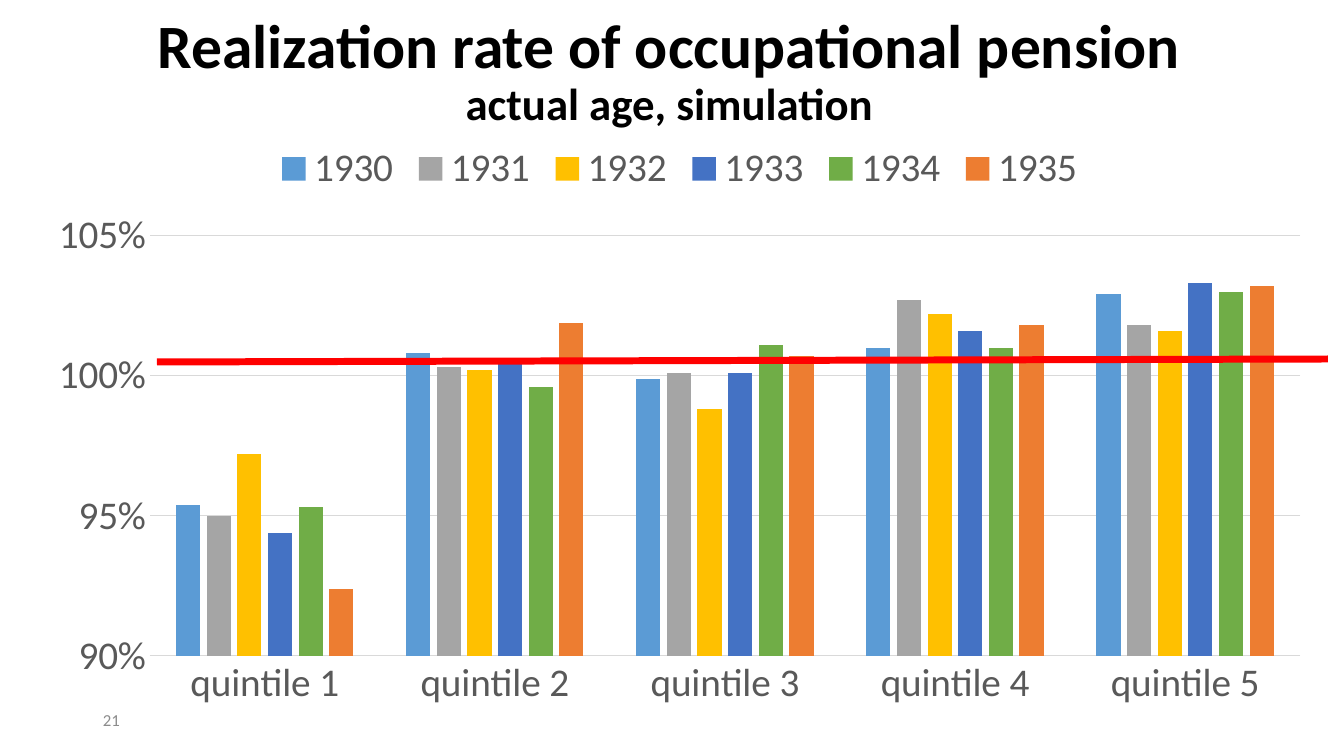
from lxml import etree
from pptx import Presentation
from pptx.chart.data import CategoryChartData
from pptx.dml.color import RGBColor
from pptx.enum.chart import XL_CHART_TYPE, XL_LEGEND_POSITION, XL_TICK_MARK
from pptx.enum.shapes import MSO_CONNECTOR
from pptx.enum.text import MSO_ANCHOR, PP_ALIGN
from pptx.oxml.ns import qn
from pptx.util import Emu, Pt

CLUSTERED = XL_CHART_TYPE.COLUMN_CLUSTERED
LEGEND_TOP = XL_LEGEND_POSITION.TOP
NO_TICK = XL_TICK_MARK.NONE
STRAIGHT = MSO_CONNECTOR.STRAIGHT
MIDDLE = MSO_ANCHOR.MIDDLE
LEFT, CENTER = PP_ALIGN.LEFT, PP_ALIGN.CENTER

PX_PER_INCH = 100.8
FONT = "Calibri"
BLACK, LABEL_GRAY, GRID_GRAY = "000000", "595959", "D9D9D9"
NUMBER_GRAY, RED = "8C8C8C", "FF0000"

QUINTILES = [f"quintile {n}" for n in range(1, 6)]
COHORTS = [
    ("1930", "5B9BD5", (0.954, 1.008, 0.999, 1.01, 1.029)),
    ("1931", "A5A5A5", (0.95, 1.003, 1.001, 1.027, 1.018)),
    ("1932", "FFC000", (0.972, 1.002, 0.988, 1.022, 1.016)),
    ("1933", "4472C4", (0.944, 1.006, 1.001, 1.016, 1.033)),
    ("1934", "70AD47", (0.953, 0.996, 1.011, 1.01, 1.03)),
    ("1935", "ED7D31", (0.924, 1.019, 1.007, 1.018, 1.032)),
]


def px(*lengths):
    """Turn pixel lengths into a list of EMU lengths."""
    return [Emu(round(length * 914400 / PX_PER_INCH)) for length in lengths]


def color(hex_string):
    """Turn a hex string into a colour."""
    return RGBColor.from_string(hex_string)


def style_font(font, size, hex_string, bold=False):
    """Set typeface, size, colour and weight of a font."""
    font.name = FONT
    font.size = Pt(size)
    font.bold = bold
    font.color.rgb = color(hex_string)


def style_line(line, hex_string, width):
    """Set colour and width of a line."""
    line.color.rgb = color(hex_string)
    line.width = Pt(width)


def add_text(slide, box, lines, hex_string, align, bold=False):
    """Add one paragraph whose lines are (text, size) pairs."""
    frame = slide.shapes.add_textbox(*px(*box)).text_frame
    frame.word_wrap = True
    frame.vertical_anchor = MIDDLE
    paragraph = frame.paragraphs[0]
    paragraph.alignment = align
    paragraph.line_spacing = 0.9
    style_font(paragraph.font, lines[0][1], hex_string, bold)
    for index, (text, size) in enumerate(lines):
        if index:
            paragraph.add_line_break()
        run = paragraph.add_run()
        run.text = text
        style_font(run.font, size, hex_string, bold)


def style_axis(axis):
    """Remove tick marks from an axis and style its labels."""
    axis.major_tick_mark = axis.minor_tick_mark = NO_TICK
    style_font(axis.tick_labels.font, 28, LABEL_GRAY)


def add_rate_chart(slide, box):
    """Add the clustered columns of realization rates by quintile."""
    rates = CategoryChartData(number_format="0.0%")
    rates.categories = QUINTILES
    for cohort, _, values in COHORTS:
        rates.add_series(cohort, values)
    chart = slide.shapes.add_chart(CLUSTERED, *px(*box), rates).chart
    style_font(chart.font, 28, BLACK)
    chart.has_title = False
    chart.has_legend = True
    chart.legend.position = LEGEND_TOP
    chart.legend.include_in_layout = False
    style_font(chart.legend.font, 28, LABEL_GRAY)

    columns = chart.plots[0]
    columns.gap_width, columns.overlap = 219, -27
    columns.vary_by_categories = False
    for series, (_, fill, _) in zip(columns.series, COHORTS):
        series.format.fill.solid()
        series.format.fill.fore_color.rgb = color(fill)

    style_axis(chart.category_axis)
    style_line(chart.category_axis.format.line, GRID_GRAY, 0.75)
    rate_axis = chart.value_axis
    style_axis(rate_axis)
    rate_axis.format.line.fill.background()
    rate_axis.minimum_scale, rate_axis.maximum_scale = 0.9, 1.05
    rate_axis.major_unit = 0.05
    rate_axis.tick_labels.number_format = "0%"
    rate_axis.tick_labels.number_format_is_linked = False
    style_line(rate_axis.major_gridlines.format.line, GRID_GRAY, 0.75)


def add_reference_line(slide, ends):
    """Add the red line that marks full realization."""
    reference = slide.shapes.add_connector(STRAIGHT, *px(*ends))
    style_line(reference.line, RED, 5)
    properties = reference._element.spPr
    etree.SubElement(properties, qn("a:effectLst"))


def main():
    """Build the slide and save it."""
    presentation = Presentation()
    presentation.slide_width, presentation.slide_height = px(1344, 756)
    slide = presentation.slides.add_slide(presentation.slide_layouts[6])
    title = [("Realization rate of occupational pension", 44),
             ("actual age, simulation", 32)]
    add_text(slide, (90, 0, 1159, 146), title, BLACK, CENTER, bold=True)
    add_rate_chart(slide, (33, 130, 1293, 589))
    add_reference_line(slide, (157, 362, 1328, 359))
    add_text(slide, (93, 701, 302, 40), [("21", 12)], NUMBER_GRAY, LEFT)
    presentation.save("out.pptx")


if __name__ == "__main__":
    main()
